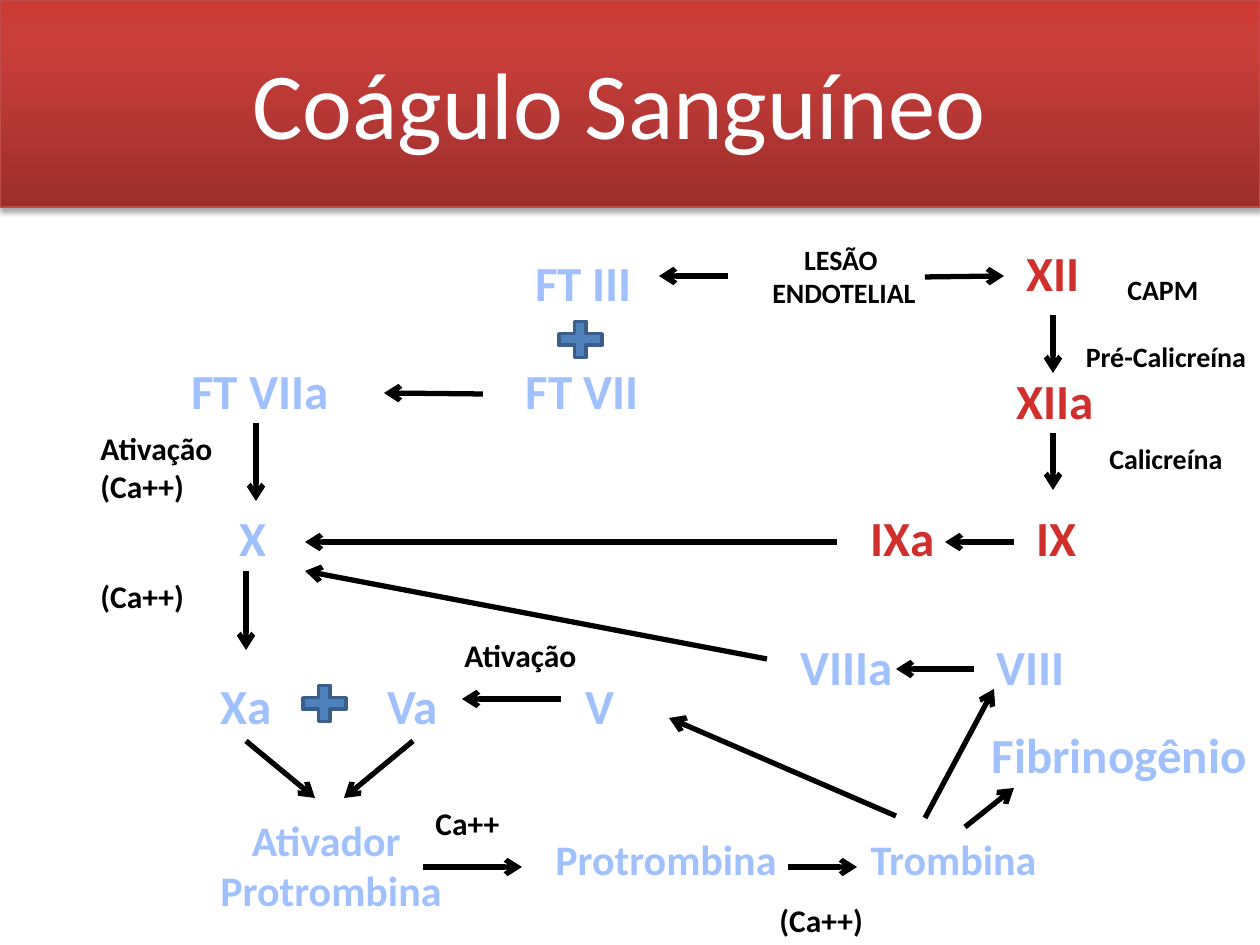
import pptx
import pptx.util
import pptx.oxml
import pptx.oxml.ns
import pptx.dml.color
import pptx.enum.text
import pptx.enum.shapes

PX = 914400 / 126
SHAPE = pptx.enum.shapes.MSO_SHAPE
ALIGN = pptx.enum.text.PP_ALIGN
NS = pptx.oxml.ns.nsdecls("a")


def px(n):
    return pptx.util.Emu(round(n * PX))


def rgb(value):
    return pptx.dml.color.RGBColor.from_string(value)


class Deck:
    FONT = "Calibri"
    WHITE, BLACK, BLUE, RED = "FFFFFF", "000000", "A0C1FF", "D02F2C"

    def __init__(self, width, height):
        self.prs = pptx.Presentation()
        self.prs.slide_width, self.prs.slide_height = px(width), px(height)
        self.s = self.prs.slides.add_slide(self.prs.slide_layouts[5])

    def fill_text(self, sp, lines, size, color, bold=True, align=ALIGN.CENTER, gaps=()):
        tf = sp.text_frame
        frame = {
            "word_wrap": align == ALIGN.LEFT,
            "auto_size": pptx.enum.text.MSO_AUTO_SIZE.SHAPE_TO_FIT_TEXT,
            "vertical_anchor": pptx.enum.text.MSO_ANCHOR.TOP,
        }
        for name, value in frame.items():
            setattr(tf, name, value)
        font = {"name": self.FONT, "size": pptx.util.Pt(size), "bold": bold}
        for i, line in enumerate(lines.split("\n")):
            p = tf.add_paragraph() if i else tf.paragraphs[0]
            p.alignment = align
            if gaps:
                p.space_before = pptx.util.Pt(gaps[i])
            r = p.add_run()
            r.text = line
            for name, value in font.items():
                setattr(r.font, name, value)
            r.font.color.rgb = rgb(color)

    def title(self, text, x, y, w, h):
        sp = self.s.shapes.title
        box = {"left": x, "top": y, "width": w, "height": h}
        for name, value in box.items():
            setattr(sp, name, px(value))
        self.fill_text(sp, text, 54, self.WHITE, bold=False)
        self.s.shapes._spTree.append(sp._element)

    def label(self, text, x, y, w, h, size, color, **style):
        sp = self.s.shapes.add_textbox(px(x), px(y), px(w), px(h))
        self.fill_text(sp, text, size, color, **style)

    def shape(self, kind, x, y, w, h, fill, line, weight):
        sp = self.s.shapes.add_shape(kind, px(x), px(y), px(w), px(h))
        sp.shadow.inherit = False
        sp.fill.solid()
        sp.fill.fore_color.rgb = rgb(fill)
        sp.line.color.rgb = rgb(line)
        sp.line.width = pptx.util.Pt(weight)
        return sp

    def banner(self, w, h, stops):
        sp = self.shape(SHAPE.RECTANGLE, 0, 0, w, h, stops[0][1], "BF4C48", 0.75)
        gs = "".join(
            f'<a:gs pos="{pos * 1000}"><a:srgbClr val="{c}"/></a:gs>' for pos, c in stops
        )
        grad = pptx.oxml.parse_xml(
            f'<a:gradFill {NS} rotWithShape="1"><a:gsLst>{gs}</a:gsLst>'
            '<a:lin ang="16200000" scaled="0"/></a:gradFill>'
        )
        shadow = pptx.oxml.parse_xml(
            f'<a:outerShdw {NS} blurRad="39370" dist="22860" dir="5400000" rotWithShape="0">'
            '<a:srgbClr val="000000"><a:alpha val="35000"/></a:srgbClr></a:outerShdw>'
        )
        spPr = sp._element.spPr
        spPr.replace(spPr.find(pptx.oxml.ns.qn("a:solidFill")), grad)
        spPr.find(pptx.oxml.ns.qn("a:effectLst")).append(shadow)

    def arrow(self, x1, y1, x2, y2):
        kind = pptx.enum.shapes.MSO_CONNECTOR.STRAIGHT
        c = self.s.shapes.add_connector(kind, px(x1), px(y1), px(x2), px(y2))
        c.line.color.rgb = rgb(self.BLACK)
        c.line.width = pptx.util.Pt(3)
        ln = c._element.spPr.find(pptx.oxml.ns.qn("a:ln"))
        ln.append(pptx.oxml.parse_xml(f'<a:tailEnd {NS} type="arrow"/>'))
        c._element.spPr.append(pptx.oxml.parse_xml(f"<a:effectLst {NS}/>"))


FACTORS = {
    Deck.BLUE: [
        ("FT III", 522, 246, 123), ("FT VII", 512, 354, 140), ("FT VIIa", 178, 354, 164),
        ("X", 227, 501, 49), ("Xa", 197, 669, 98), ("Va", 364, 669, 98), ("V", 551, 669, 98),
        ("VIII", 984, 630, 94), ("VIIIa", 788, 630, 118), ("Fibrinogênio", 978, 718, 282),
    ],
    Deck.RED: [
        ("XII", 1014, 236, 79), ("XIIa", 1004, 364, 103),
        ("IX", 1024, 501, 66), ("IXa", 857, 501, 91),
    ],
}
PROTEINS = [
    ("Ativador \nProtrombina", 207, 808, 248, 115),
    ("Protrombina", 542, 827, 248, 63),
    ("Trombina", 857, 827, 193, 63),
]
NOTES = [
    ("Ativação (Ca++)", 88, 423, 147, 89), ("Ativação", 452, 630, 147, 50),
    ("Ca++", 423, 798, 108, 50), ("(Ca++)", 88, 571, 118, 50), ("(Ca++)", 767, 895, 118, 50),
]
ARROWS = [
    (728, 276, 659, 276), (925, 277, 1004, 276), (1053, 315, 1053, 373),
    (1053, 433, 1053, 490), (1014, 542, 945, 542), (837, 542, 305, 542),
    (483, 394, 384, 393), (256, 423, 256, 501), (246, 571, 246, 650),
    (767, 659, 305, 571), (974, 669, 896, 669), (561, 699, 462, 699),
    (246, 741, 315, 798), (413, 741, 344, 798), (423, 867, 522, 867),
    (788, 867, 857, 867), (896, 816, 669, 718), (925, 818, 994, 689),
    (965, 827, 1014, 788),
]


def main():
    d = Deck(1260, 945)
    d.banner(1260, 207, [(0, "9C2F2D"), (80, "CB3E3A"), (100, "CE3B37")])
    d.title("Coágulo Sanguíneo", 236, 39, 766, 127)
    for color, factors in FACTORS.items():
        for text, x, y, w in factors:
            d.label(text, x, y, w, 72, 28, color)
    for protein in PROTEINS:
        d.label(*protein, 24, d.BLUE)
    for note in NOTES:
        d.label(*note, 18, d.BLACK, align=ALIGN.LEFT)
    d.label("LESÃO \nENDOTELIAL", 759, 236, 170, 81, 16, d.BLACK)
    d.label("CAPM \nPré-Calicreína\nCalicreína", 1072, 266, 188, 217, 16, d.BLACK,
            gaps=(0, 19.5, 39))
    for x, y in [(551, 315), (295, 679)]:
        d.shape(SHAPE.MATH_PLUS, x, y, 59, 49, "4F81BD", "3A5F8C", 2)
    for ends in ARROWS:
        d.arrow(*ends)
    d.prs.save("out.pptx")


if __name__ == "__main__":
    main()
